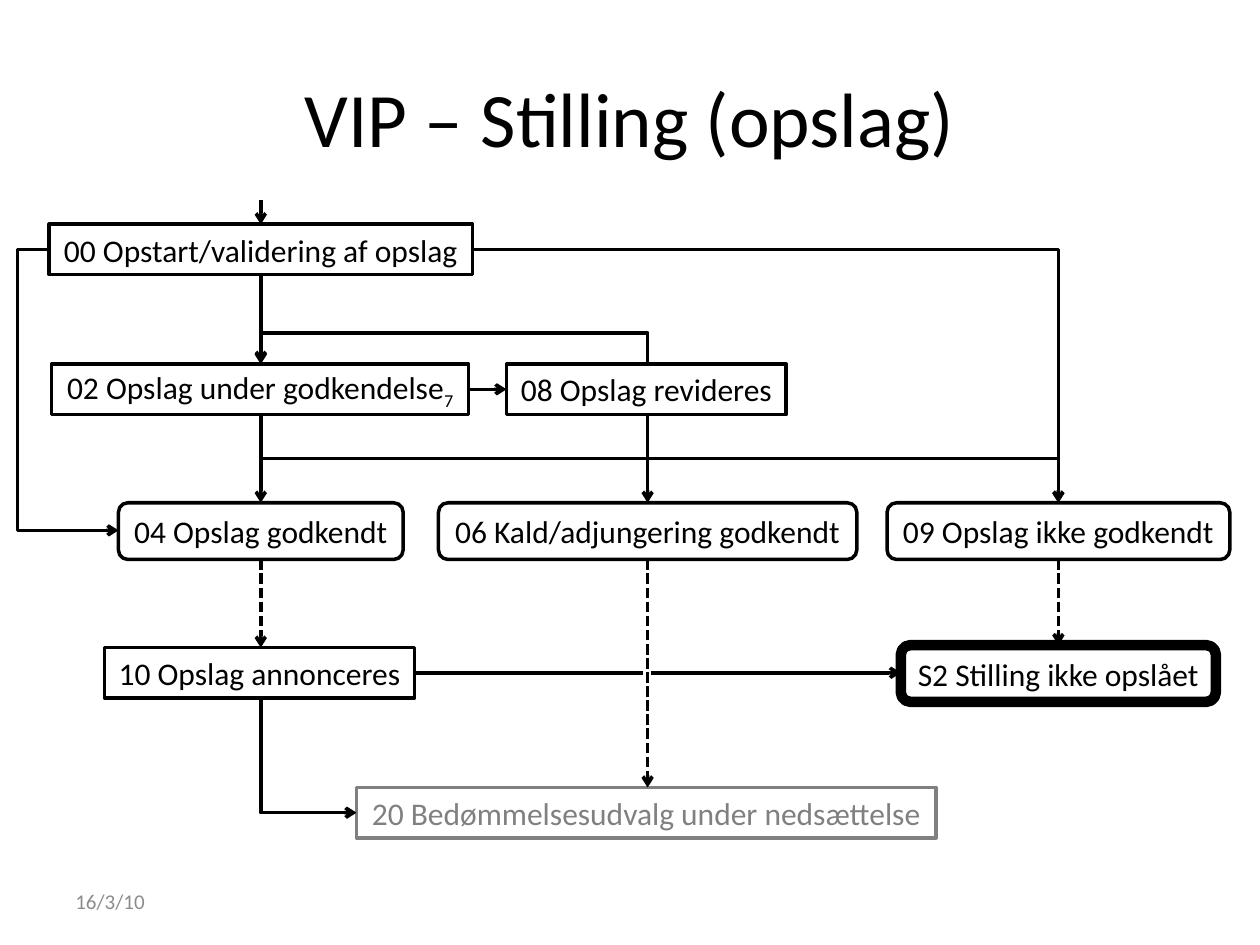
from pptx import Presentation
from pptx.dml.color import RGBColor
from pptx.enum.dml import MSO_LINE
from pptx.enum.shapes import MSO_CONNECTOR, MSO_SHAPE
from pptx.enum.text import MSO_ANCHOR, MSO_AUTO_SIZE, PP_ALIGN
from pptx.oxml.ns import qn
from pptx.util import Inches, Pt
from lxml.etree import SubElement

BLACK = RGBColor(0x00, 0x00, 0x00)
WHITE = RGBColor(0xFF, 0xFF, 0xFF)
GRAY = RGBColor(0x80, 0x80, 0x80)
DATE_GRAY = RGBColor(0x8C, 0x8C, 0x8C)

PROCESS = MSO_SHAPE.FLOWCHART_PROCESS
STATE = MSO_SHAPE.FLOWCHART_ALTERNATE_PROCESS


class FlowSlide:
    font = "Calibri"
    text_size = 18
    line_width = 2

    def __init__(self, presentation):
        self.slide = presentation.slides.add_slide(presentation.slide_layouts[5])

    def add_run(self, paragraph, text, size, color):
        run = paragraph.add_run()
        run.text = text
        run.font.name = self.font
        run.font.size = Pt(size)
        run.font.color.rgb = color
        return run

    def title(self, text):
        title = self.slide.shapes.title
        title.left, title.top = Inches(0.5), Inches(0.3)
        title.width, title.height = Inches(9), Inches(1.25)
        title.text_frame.vertical_anchor = MSO_ANCHOR.MIDDLE
        paragraph = title.text_frame.paragraphs[0]
        paragraph.alignment = PP_ALIGN.CENTER
        self.add_run(paragraph, text, 44, BLACK)

    def date(self, text):
        box = self.slide.shapes.add_textbox(
            Inches(0.5), Inches(6.95), Inches(2.33), Inches(0.4))
        box.text_frame.word_wrap = True
        box.text_frame.vertical_anchor = MSO_ANCHOR.MIDDLE
        self.add_run(box.text_frame.paragraphs[0], text, 12, DATE_GRAY)

    def box(self, text, kind, left, top, width, color=BLACK,
            line_width=line_width, subscript=None):
        height = 0.4 if kind == PROCESS else 0.45
        shape = self.slide.shapes.add_shape(
            kind, Inches(left), Inches(top), Inches(width), Inches(height))
        shape.shadow.inherit = False
        shape.fill.background()
        shape.line.color.rgb = color
        shape.line.width = Pt(line_width)
        frame = shape.text_frame
        frame.word_wrap = False
        frame.auto_size = MSO_AUTO_SIZE.SHAPE_TO_FIT_TEXT
        paragraph = frame.paragraphs[0]
        paragraph.alignment = PP_ALIGN.CENTER
        self.add_run(paragraph, text, self.text_size, color)
        if subscript:
            run = self.add_run(paragraph, subscript, self.text_size, color)
            run.font._element.set("baseline", "-25000")

    def gap(self, left, top, width, height):
        shape = self.slide.shapes.add_shape(
            MSO_SHAPE.RECTANGLE, Inches(left), Inches(top),
            Inches(width), Inches(height))
        shape.shadow.inherit = False
        shape.fill.solid()
        shape.fill.fore_color.rgb = WHITE
        shape.line.color.rgb = WHITE
        shape.line.width = Pt(0.75)

    def arrow(self, start, end, kind=MSO_CONNECTOR.STRAIGHT, dashed=False):
        connector = self.slide.shapes.add_connector(
            kind, *(Inches(value) for value in (*start, *end)))
        connector.line.color.rgb = BLACK
        connector.line.width = Pt(self.line_width)
        if dashed:
            connector.line.dash_style = MSO_LINE.SQUARE_DOT
        line = connector.line._get_or_add_ln()
        SubElement(line, qn("a:tailEnd"), type="arrow")
        SubElement(connector._element.spPr, qn("a:effectLst"))
        return connector

    def elbow(self, start, end, bend=None, vertical=False):
        """Bend is the turning point as a share of the way; None means one corner."""
        connector = self.arrow(start, end, MSO_CONNECTOR.ELBOW)
        properties = connector._element.spPr
        geometry = properties.find(qn("a:prstGeom"))
        geometry.set("prst", "bentConnector2" if bend is None else "bentConnector3")
        if bend is not None:
            guides = geometry.find(qn("a:avLst"))
            if guides is None:
                guides = SubElement(geometry, qn("a:avLst"))
            SubElement(guides, qn("a:gd"), name="adj1",
                       fmla=f"val {round(bend * 100000)}")
        if vertical:
            # A quarter turn makes the connector leave its start vertically
            (x1, y1), (x2, y2) = start, end
            width, height = abs(y2 - y1), abs(x2 - x1)
            connector.left = Inches((x1 + x2 - width) / 2)
            connector.top = Inches((y1 + y2 - height) / 2)
            connector.width, connector.height = Inches(width), Inches(height)
            transform = properties.find(qn("a:xfrm"))
            transform.set("rot", str(270 * 60000))
            transform.set("flipH", str(int(y2 > y1)))
            transform.set("flipV", str(int(x2 < x1)))


def main():
    presentation = Presentation()
    presentation.slide_width, presentation.slide_height = Inches(10), Inches(7.5)
    flow = FlowSlide(presentation)
    flow.title("VIP – Stilling (opslag)")
    flow.date("16/3/10")

    # Column centres and row tops
    left, middle, right = 2.07, 5.14, 8.4
    start, review, decision, announce, committee = 1.78, 2.89, 3.99, 5.14, 6.25

    # Process steps
    flow.box("00 Opstart/validering af opslag", PROCESS, 0.39, start, 3.36)
    flow.box("02 Opslag under godkendelse", PROCESS, 0.41, review, 3.31,
             subscript="7")
    flow.box("08 Opslag revideres", PROCESS, 4.02, review, 2.22)
    flow.box("10 Opslag annonceres", PROCESS, 0.83, announce, 2.46)
    flow.box("20 Bedømmelsesudvalg under nedsættelse", PROCESS,
             2.83, committee, 4.6, color=GRAY)

    # States
    flow.box("04 Opslag godkendt", STATE, 0.94, decision, 2.26)
    flow.box("06 Kald/adjungering godkendt", STATE, 3.48, decision, 3.32)
    flow.box("09 Opslag ikke godkendt", STATE, 7.04, decision, 2.72)
    flow.box("S2 Stilling ikke opslået", STATE, 7.15, 5.12, 2.5, line_width=6)

    # Straight arrows
    for begin, end in (
        ((left, 1.59), (left, start)),
        ((left, 2.19), (left, review)),
        ((left, 3.29), (left, decision)),
        ((middle, 3.29), (middle, decision)),
        ((3.72, 3.09), (4.02, 3.09)),
        ((3.3, 5.34), (7.15, 5.34)),
    ):
        flow.arrow(begin, end)

    # Dashed arrows, with a gap where one crosses the line to S2
    flow.gap(5.11, 4.99, 0.05, 0.68)
    for column, end in ((left, announce), (middle, committee), (right, 5.12)):
        flow.arrow((column, 4.44), (column, end), dashed=True)

    # Elbow arrows
    flow.elbow((3.74, 1.98), (right, decision))
    flow.elbow((0.39, 1.98), (0.94, 4.21), bend=-0.455)
    flow.elbow((middle, 2.89), (left, 2.88), bend=25, vertical=True)
    flow.elbow((left, 3.29), (right, decision), bend=0.5, vertical=True)
    flow.elbow((left, 5.54), (2.83, 6.45), vertical=True)

    presentation.save("out.pptx")


if __name__ == "__main__":
    main()
